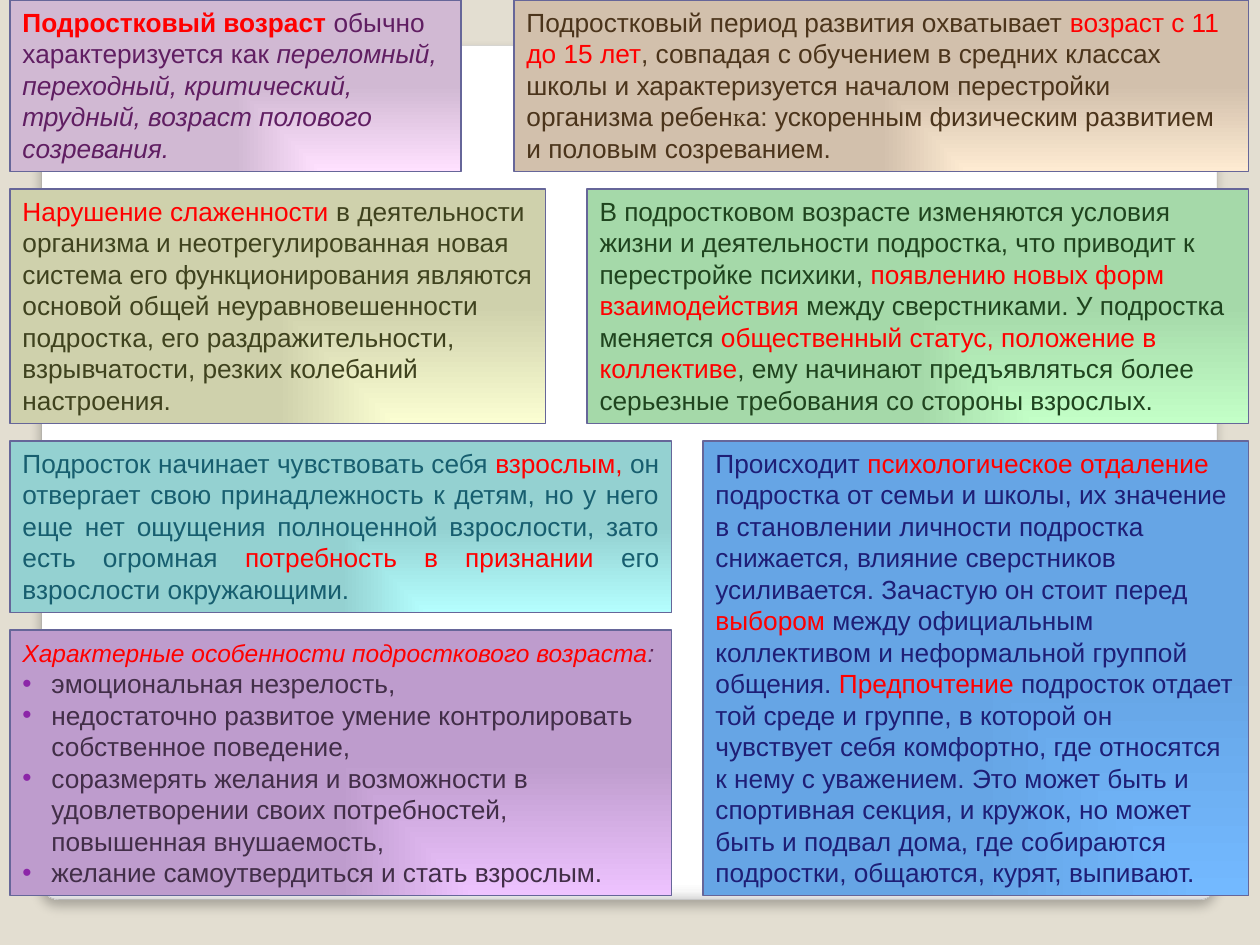
import pptx
import pptx.util
import pptx.dml.color
import pptx.enum.shapes
import pptx.enum.text
import pptx.oxml
import pptx.oxml.ns
from pptx.util import Inches

RGBColor = pptx.dml.color.RGBColor
BACKDROP = RGBColor(0xE3, 0xDE, 0xD1)
WHITE = RGBColor(0xFF, 0xFF, 0xFF)
PANEL_STOPS = [(0, WHITE), (98, WHITE), (99, RGBColor(0xF7, 0xF7, 0xF7)), (100, RGBColor(0xDA, 0xDA, 0xDA))]
PANEL_EDGE = RGBColor(0xA4, 0xA4, 0xA4)
CARD_EDGE = RGBColor(0x66, 0x66, 0x99)
RED = RGBColor(0xFF, 0x00, 0x00)
PLUM = RGBColor(0x60, 0x1E, 0x62)
BROWN = RGBColor(0x4B, 0x34, 0x1B)
OLIVE = RGBColor(0x3F, 0x42, 0x1E)
GREEN = RGBColor(0x1F, 0x44, 0x1E)
TEAL = RGBColor(0x17, 0x5E, 0x6F)
NAVY = RGBColor(0x1E, 0x1E, 0x76)
MAUVE = RGBColor(0x5E, 0x24, 0x56)
DARK = RGBColor(0x42, 0x2E, 0x48)
BULLET = RGBColor(0x8C, 0x26, 0xA8)
PINK_FILL = (RGBColor(0xFF, 0xE1, 0xFF), RGBColor(0xD1, 0xB9, 0xD3))
SAND_FILL = (RGBColor(0xFE, 0xEB, 0xD2), RGBColor(0xD2, 0xC0, 0xAC))
OLIVE_FILL = (RGBColor(0xFB, 0xFE, 0xD2), RGBColor(0xCF, 0xD1, 0xAC))
GREEN_FILL = (RGBColor(0xC3, 0xFF, 0xC7), RGBColor(0xA5, 0xD9, 0xA9))
TEAL_FILL = (RGBColor(0xB4, 0xFE, 0xFE), RGBColor(0x94, 0xD1, 0xD1))
BLUE_FILL = (RGBColor(0x73, 0xB9, 0xFF), RGBColor(0x66, 0xA5, 0xE5))
VIOLET_FILL = (RGBColor(0xEE, 0xC3, 0xFF), RGBColor(0xBE, 0x9C, 0xCD))
LEFT, RIGHT = 0.08, 9.91
ROWS = (0, 1.5, 3.5, 5)


def xml(markup):
    """Parse markup whose root element takes the drawing namespace."""
    head, rest = markup.split(">", 1)
    slash = "/" if head.endswith("/") else ""
    return pptx.oxml.parse_xml(f"{head.rstrip('/')} {pptx.oxml.ns.nsdecls('a')}{slash}>{rest}")


def set_gradient(shape, stops, direction):
    """Fill a shape with a gradient of percentage stops."""
    marks = "".join(f'<a:gs pos="{at * 1000}"><a:srgbClr val="{color}"/></a:gs>' for at, color in stops)
    gradient = xml(f'<a:gradFill rotWithShape="1"><a:gsLst>{marks}</a:gsLst>{direction}</a:gradFill>')
    shape._element.spPr.find(pptx.oxml.ns.qn("a:prstGeom")).addnext(gradient)


def add_panel(slide):
    """Add the white rounded panel with its soft shadow."""
    kind = pptx.enum.shapes.MSO_SHAPE.ROUNDED_RECTANGLE
    panel = slide.shapes.add_shape(kind, Inches(0.33), Inches(0.36), Inches(9.33), Inches(6.78))
    panel.adjustments[0] = 0.02
    panel.line.color.rgb = PANEL_EDGE
    panel.line.width = pptx.util.Pt(0.16)
    set_gradient(panel, PANEL_STOPS, '<a:lin ang="5400000" scaled="0"/>')
    panel._element.spPr.append(xml(
        '<a:effectLst><a:outerShdw blurRad="76200" dist="50800" dir="5400000" algn="tl" rotWithShape="0">'
        '<a:srgbClr val="000000"><a:alpha val="25000"/></a:srgbClr></a:outerShdw></a:effectLst>'))


def add_card(slide, left, top, width, height, shades):
    """Add a gradient card and return its text frame."""
    kind = pptx.enum.shapes.MSO_SHAPE.RECTANGLE
    card = slide.shapes.add_shape(kind, Inches(left), Inches(top), Inches(width), Inches(height))
    card.shadow.inherit = False
    card.line.color.rgb = CARD_EDGE
    card.line.width = pptx.util.Pt(0.75)
    set_gradient(card, zip((0, 100), shades),
                 '<a:path path="rect"><a:fillToRect l="100000" t="100000"/></a:path>'
                 '<a:tileRect r="-100000" b="-100000"/>')
    frame = card.text_frame
    frame.word_wrap = True
    frame.vertical_anchor = pptx.enum.text.MSO_ANCHOR.TOP
    frame.auto_size = pptx.enum.text.MSO_AUTO_SIZE.SHAPE_TO_FIT_TEXT
    return frame


def add_run(paragraph, text, color, size=15, font="Arial", bold=False, italic=False):
    """Add one formatted run."""
    run = paragraph.add_run()
    run.text = text
    run.font.size = pptx.util.Pt(size)
    run.font.name = font
    run.font.bold = bold
    run.font.italic = italic
    run.font.color.rgb = color


def write(paragraph, *runs, align=pptx.enum.text.PP_ALIGN.LEFT):
    """Fill a paragraph with (text, color, options) runs."""
    paragraph.alignment = align
    for text, color, *options in runs:
        add_run(paragraph, text, color, **(options[0] if options else {}))


def add_bullet(frame, text):
    """Add a bulleted paragraph with a hanging indent."""
    paragraph = frame.add_paragraph()
    write(paragraph, (text, DARK))
    properties = paragraph._p.get_or_add_pPr()
    indent = Inches(0.23)
    properties.set("marL", str(indent))
    properties.set("indent", str(-indent))
    properties.append(xml(f'<a:buClr><a:srgbClr val="{BULLET}"/></a:buClr>'))
    properties.append(xml('<a:buFont typeface="Arial"/>'))
    properties.append(xml('<a:buChar char="•"/>'))


def add_features(slide):
    """Add the card listing the features of adolescence."""
    features = add_card(slide, LEFT, ROWS[3], 5.25, 2.11, VIOLET_FILL)
    write(features.paragraphs[0],
          ("Характерные особенности подросткового возраста", RED, {"size": 14, "italic": True}),
          (":", MAUVE, {"size": 14, "italic": True}), (" ", DARK))
    for feature in (
            "эмоциональная незрелость,",
            "недостаточно развитое умение контролировать собственное поведение,",
            "соразмерять желания и возможности в удовлетворении своих потребностей, повышенная внушаемость,",
            "желание самоутвердиться и стать взрослым."):
        add_bullet(features, feature)


def main():
    """Build the slide and save it."""
    deck = pptx.Presentation()
    deck.slide_width, deck.slide_height = Inches(10), Inches(7.5)
    slide = deck.slides.add_slide(deck.slide_layouts[6])
    slide.background.fill.solid()
    slide.background.fill.fore_color.rgb = BACKDROP
    add_panel(slide)

    definition = add_card(slide, LEFT, ROWS[0], 3.58, 1.36, PINK_FILL)
    write(definition.paragraphs[0],
          ("Подростковый возраст", RED, {"bold": True}),
          (" обычно характеризуется как ", PLUM),
          ("переломный, переходный, критический, трудный, возраст полового созревания.", PLUM, {"italic": True}))

    period = add_card(slide, RIGHT - 5.83, ROWS[0], 5.83, 1.36, SAND_FILL)
    write(period.paragraphs[0],
          ("Подростковый период развития охватывает ", BROWN),
          ("возраст с 11 до 15 лет", RED),
          (", совпадая с обучением в средних классах школы и характеризуется началом "
           "перестройки организма ребен", BROWN),
          ("к", BROWN, {"font": "Times New Roman"}),
          ("а: ускоренным физическим развитием и половым созреванием.", BROWN))

    conditions = add_card(slide, RIGHT - 5.25, ROWS[1], 5.25, 1.86, GREEN_FILL)
    write(conditions.paragraphs[0],
          ("В подростковом возрасте изменяются условия жизни и деятельности подростка, "
           "что приводит к перестройке психики, ", GREEN),
          ("появлению новых форм взаимодействия", RED),
          (" между сверстниками. У подростка меняется ", GREEN),
          ("общественный статус, положение в коллективе", RED),
          (", ему начинают предъявляться более серьезные требования со стороны взрослых.", GREEN))

    adulthood = add_card(slide, LEFT, ROWS[2], 5.25, 1.36, TEAL_FILL)
    write(adulthood.paragraphs[0],
          ("Подросток начинает чувствовать себя ", TEAL),
          ("взрослым,", RED),
          (" он отвергает свою принадлежность к детям, но у него еще нет ощущения "
           "полноценной взрослости, зато есть огромная ", TEAL),
          ("потребность в признании", RED),
          (" его взрослости окружающими. ", TEAL),
          align=pptx.enum.text.PP_ALIGN.JUSTIFY)

    imbalance = add_card(slide, LEFT, ROWS[1], 4.25, 1.86, OLIVE_FILL)
    write(imbalance.paragraphs[0],
          ("Нарушение слаженности", RED),
          (" в деятельности организма и неотрегулированная новая система его функционирования "
           "являются основой общей неуравновешенности подростка, его раздражительности, "
           "взрывчатости, резких колебаний настроения.", OLIVE))

    distancing = add_card(slide, RIGHT - 4.33, ROWS[2], 4.33, 3.61, BLUE_FILL)
    write(distancing.paragraphs[0],
          ("Происходит ", NAVY),
          ("психологическое отдаление", RED),
          (" подростка от семьи и школы, их значение в становлении личности подростка "
           "снижается, влияние сверстников усиливается. Зачастую он стоит перед ", NAVY),
          ("выбором ", RED),
          ("между официальным коллективом и неформальной группой общения. ", NAVY),
          ("Предпочтение", RED),
          (" подросток отдает той среде и группе, в которой он чувствует себя комфортно, "
           "где относятся к нему с уважением. Это может быть и спортивная секция, и кружок, "
           "но может быть и подвал дома, где собираются подростки, общаются, курят, выпивают.", NAVY))

    add_features(slide)
    deck.save("out.pptx")


if __name__ == "__main__":
    main()
